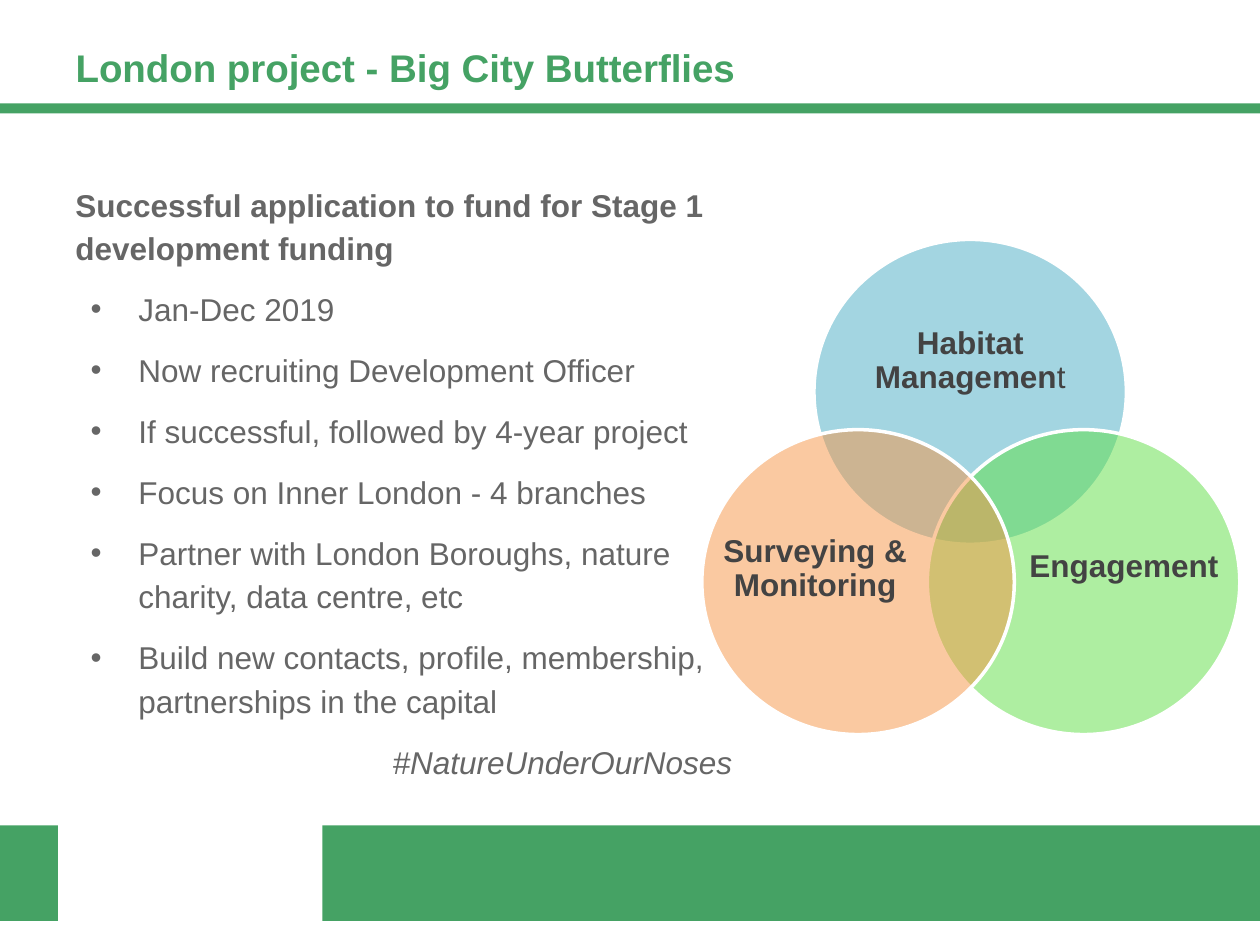
from lxml.etree import SubElement
from pptx import Presentation
from pptx.dml.color import RGBColor
from pptx.enum.shapes import MSO_SHAPE as Shape
from pptx.enum.text import MSO_ANCHOR as Anchor, MSO_AUTO_SIZE as AutoSize, PP_ALIGN as Align
from pptx.oxml.ns import qn
from pptx.util import Inches, Pt

GREEN, GREY, DARK, WHITE = "45A264", "666666", "434343", "FFFFFF"
CIRCLE_SIZE = (2.48, 2.42)

BANDS = [(0, 0.82, 10, 0.08), (2.56, 6.55, 7.44, 0.76), (0, 6.55, 0.46, 0.76)]
HEADING = "Successful application to fund for Stage 1 development funding"
POINTS = [
    "Jan-Dec 2019",
    "Now recruiting Development Officer",
    "If successful, followed by 4-year project",
    "Focus on Inner London - 4 branches",
    "Partner with London Boroughs, nature charity, data centre, etc",
    "Build new contacts, profile, membership, partnerships in the capital",
]
HASHTAG = "#NatureUnderOurNoses"
# circle position, colour, label box, label as (bold part, regular part)
THEMES = [
    ((6.46, 1.9), "49ACC5", (6.79, 2.32, 1.82, 1.09), ("Habitat Managemen", "t")),
    ((7.36, 3.41), "5FDF45", (8.05, 4.19, 1.74, 0.63), ("Engagement", "")),
    ((5.57, 3.41), "F69444", (5.65, 4.04, 1.64, 0.96), ("Surveying & Monitoring", "")),
]


def rgb(value):
    return RGBColor.from_string(value)


def inches(values):
    return [Inches(value) for value in values]


def set_font(font, size, color, bold=None, italic=None):
    font.name, font.size = "Arial", Pt(size)
    font.color.rgb = rgb(color)
    font.bold, font.italic = bold, italic


def add_filled(shapes, preset, box, color):
    shape = shapes.add_shape(preset, *inches(box))
    shape.shadow.inherit = False
    shape.fill.solid()
    shape.fill.fore_color.rgb = rgb(color)
    return shape


def add_band(slide, box):
    add_filled(slide.shapes, Shape.RECTANGLE, box, GREEN).line.fill.background()


def set_title(slide, text):
    title = slide.shapes.title
    title.left, title.top, title.width, title.height = inches((0.5, 0.3, 9, 0.57))
    frame = title.text_frame
    frame.text = text
    frame.auto_size = AutoSize.NONE
    frame.vertical_anchor = Anchor.TOP
    heading = frame.paragraphs[0]
    heading.alignment = Align.LEFT
    set_font(heading.font, 22, GREEN, bold=True)


def add_bullet(paragraph):
    properties = paragraph._p.get_or_add_pPr()
    properties.set("marL", str(Inches(0.5)))
    properties.set("indent", str(Inches(-0.38)))
    color = SubElement(properties, qn("a:buClr"))
    SubElement(color, qn("a:srgbClr"), val=GREY)
    SubElement(properties, qn("a:buFont"), typeface="Arial")
    SubElement(properties, qn("a:buChar"), char="•")


def add_body(slide):
    frame = slide.shapes.add_textbox(*inches((0.5, 1.38, 5.41, 4.59))).text_frame
    frame.word_wrap = True
    heading = frame.paragraphs[0]
    heading.text = HEADING
    heading.line_spacing = 1.15
    set_font(heading.font, 18, GREY, bold=True)
    for text in POINTS + [HASHTAG]:
        paragraph = frame.add_paragraph()
        paragraph.text = text
        paragraph.line_spacing = 1.15
        paragraph.space_before = Pt(10)
        if text == HASHTAG:
            paragraph.alignment = Align.RIGHT
        else:
            add_bullet(paragraph)
        set_font(paragraph.font, 18, GREY, italic=text == HASHTAG)


def add_circle(shapes, position, color):
    circle = add_filled(shapes, Shape.OVAL, (*position, *CIRCLE_SIZE), color)
    fill_color = circle._element.spPr.find(qn("a:solidFill")).find(qn("a:srgbClr"))
    SubElement(fill_color, qn("a:alpha"), val="50000")
    circle.line.color.rgb = rgb(WHITE)
    circle.line.width = Pt(2)


def add_label(shapes, box, parts):
    frame = shapes.add_textbox(*inches(box)).text_frame
    frame.word_wrap = True
    frame.vertical_anchor = Anchor.MIDDLE
    frame.margin_left = frame.margin_right = frame.margin_top = frame.margin_bottom = 0
    paragraph = frame.paragraphs[0]
    paragraph.alignment = Align.CENTER
    paragraph.line_spacing = 0.9
    set_font(paragraph.font, 18, DARK)
    for text, bold in zip(parts, (True, False)):
        if text:
            run = paragraph.add_run()
            run.text = text
            run.font.bold = bold


def add_venn(slide):
    venn = slide.shapes.add_group_shape().shapes
    for position, color, label_box, label in THEMES:
        add_circle(venn, position, color)
        add_label(venn, label_box, label)


def main():
    deck = Presentation()
    deck.slide_width, deck.slide_height = inches((10, 7.5))
    slide = deck.slides.add_slide(deck.slide_layouts[5])
    for box in BANDS:
        add_band(slide, box)
    set_title(slide, "London project - Big City Butterflies")
    add_body(slide)
    add_venn(slide)
    deck.save("out.pptx")


if __name__ == "__main__":
    main()
